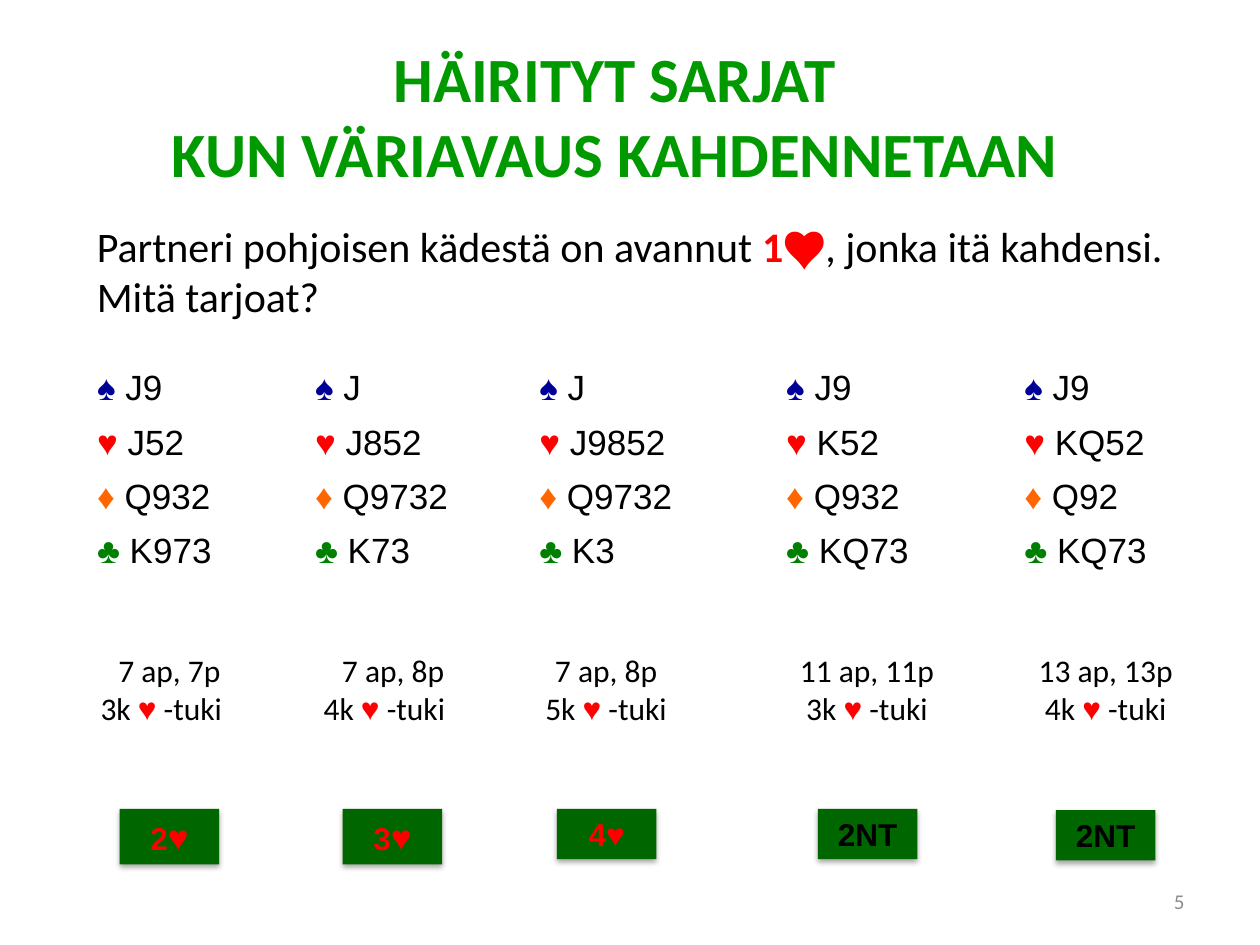
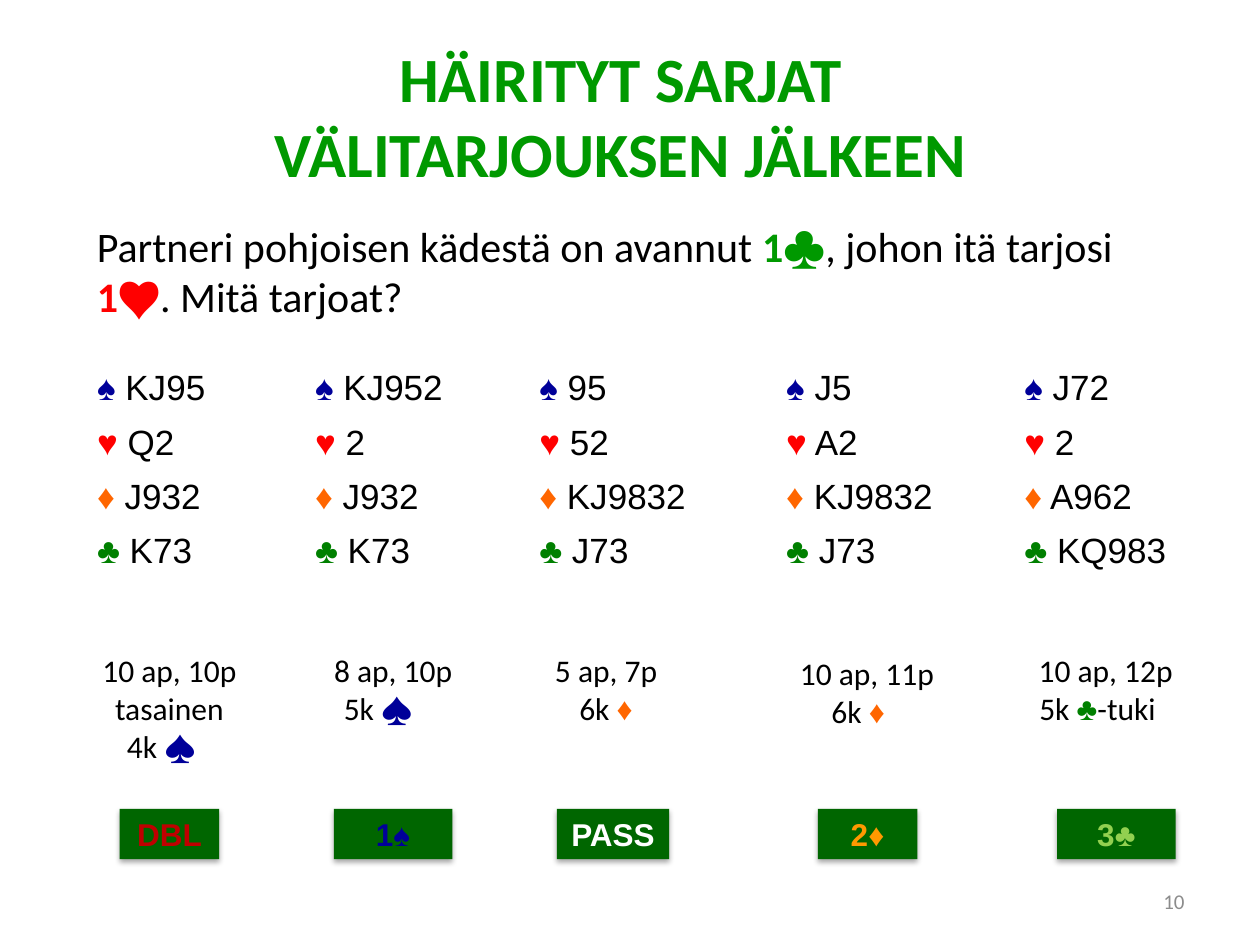
"""Build two bridge bidding quiz slides."""
import pptx
import pptx.util
import pptx.dml.color
import pptx.enum.shapes
import pptx.enum.text
import lxml.etree

Inches = pptx.util.Inches
RGBColor = pptx.dml.color.RGBColor
ALIGN = pptx.enum.text.PP_ALIGN

BLACK = RGBColor(0, 0, 0)
WHITE = RGBColor(255, 255, 255)
GRAY = RGBColor(0x8C, 0x8C, 0x8C)
GREEN = RGBColor(0, 0x99, 0)
DARK = RGBColor(0, 0x66, 0)
RED = RGBColor(255, 0, 0)
BRICK = RGBColor(0xC0, 0, 0)
AMBER = RGBColor(255, 0x99, 0)
LIME = RGBColor(0x92, 0xD0, 0x50)
NAVY = RGBColor(0, 0, 0x99)
ORANGE = RGBColor(255, 0x66, 0)
CLUB = RGBColor(0, 0x80, 0)
SUITS = {"♠": NAVY, "♥": RED, "♦": ORANGE, "♣": CLUB}
SANS, BODY = "Arial", "Calibri"

COLS = (1.73, 1.78, 1.96, 1.89, 1.57)
ROW = 0.43
NOTES = ((0.68, 1.33), (2.41, 1.42), (3.99, 1.64), (6.14, 1.48), (7.95, 1.65))

# Each note is a top and its lines: (text before, suit, suit font, text after, indent).
SLIDES = [
    {
        "title": ("HÄIRITYT SARJAT", "KUN VÄRIAVAUS KAHDENNETAAN"),
        "frame": (1.14, 7.48),
        "ask": [("Partneri pohjoisen kädestä on avannut ", BLACK, False),
                ("1", RED, True), ("♥", RED, False),
                (", jonka itä kahdensi. Mitä tarjoat?", BLACK, False)],
        "hands": ["J9 J52 Q932 K973", "J J852 Q9732 K73", "J J9852 Q9732 K3",
                  "J9 K52 Q932 KQ73", "J9 KQ52 Q92 KQ73"],
        "notes": [
            (5.12, ["7 ap, 7p", ("3k ", "♥", SANS, " -tuki", 0.02)]),
            (5.12, ["7 ap, 8p", ("4k ", "♥", SANS, " -tuki", 0.06)]),
            (5.12, ["7 ap, 8p", ("5k ", "♥", SANS, " -tuki", None)]),
            (5.12, ["11 ap, 11p", ("3k ", "♥", SANS, " -tuki", None)]),
            (5.12, ["13 ap, 13p", ("4k ", "♥", SANS, " -tuki", None)])],
        "bids": [
            (0.95, 6.42, 0.79, 0.44, RED, [("2", 18, True), ("♥", 20, False)]),
            (2.72, 6.42, 0.79, 0.44, RED, [("3", 18, True), ("♥", 20, False)]),
            (4.42, 6.42, 0.79, 0.4, RED, [("4", 18, True), ("♥", 18, False)]),
            (6.49, 6.42, 0.79, 0.4, BLACK, [("2NT", 18, True)]),
            (8.38, 6.43, 0.79, 0.4, BLACK, [("2NT", 18, True)])],
        "page": "5",
    },
    {
        "title": ("HÄIRITYT SARJAT", "VÄLITARJOUKSEN JÄLKEEN"),
        "frame": (1.62, 6.61),
        "ask": [("Partneri pohjoisen kädestä on avannut ", BLACK, False),
                ("1", GREEN, True), ("♣", GREEN, False),
                (", johon itä tarjosi ", BLACK, False),
                ("1", RED, True), ("♥", RED, False),
                (". Mitä tarjoat?", BLACK, False)],
        "hands": ["KJ95 Q2 J932 K73", "KJ952 2 J932 K73", "95 52 KJ9832 J73",
                  "J5 A2 KJ9832 J73", "J72 2 A962 KQ983"],
        "notes": [
            (5.12, ["10 ap, 10p", "tasainen", ("4k ", "♠", BODY, "", 0.23)]),
            (5.12, ["8 ap, 10p", ("5k ", "♠", BODY, "", 0.22)]),
            (5.12, ["5 ap, 7p", ("6k ", "♦", SANS, "", None)]),
            (5.14, ["10 ap, 11p", ("6k ", "♦", SANS, "", 0.36)]),
            (5.12, ["10 ap, 12p", ("5k ", "♣", SANS, "-tuki", 0.2)])],
        "bids": [
            (0.95, 6.42, 0.79, 0.4, BRICK, [("DBL", 18, True)]),
            (2.65, 6.42, 0.94, 0.4, NAVY, [("1♠", 18, True)]),
            (4.42, 6.42, 0.89, 0.4, WHITE, [("PASS", 18, True)]),
            (6.49, 6.42, 0.79, 0.4, AMBER, [("2♦", 18, True)]),
            (8.39, 6.42, 0.94, 0.4, LIME, [("3", 18, True), ("♣", 18, False)])],
        "page": "10",
    },
]


def put(para, text, size, font=BODY, color=BLACK, bold=False):
    """Add one styled run."""
    run = para.add_run()
    run.text = text
    run.font.size = pptx.util.Pt(size)
    run.font.name = font
    run.font.bold = bold
    run.font.color.rgb = color


def box(slide, left, top, width, height):
    """Add a wrapping text box and return its frame."""
    area = slide.shapes.add_textbox(*map(Inches, (left, top, width, height)))
    area.text_frame.word_wrap = True
    return area.text_frame


def head(slide, lines, frame):
    """Place and fill the title."""
    title = slide.shapes.title
    left, width = frame
    title.left, title.top = Inches(left), Inches(0.26)
    title.width, title.height = Inches(width), Inches(1.31)
    text = title.text_frame
    text.word_wrap = True
    text.auto_size = pptx.enum.text.MSO_AUTO_SIZE.NONE
    text.vertical_anchor = pptx.enum.text.MSO_ANCHOR.TOP
    para = text.paragraphs[0]
    para.alignment = ALIGN.CENTER
    for num, line in enumerate(lines):
        if num:
            para.add_line_break()
        put(para, line, 36, color=GREEN, bold=True)


def deal(slide, hands):
    """Show the hands as a table, one per column."""
    frame = slide.shapes.add_table(
        len(SUITS), len(hands), Inches(0.67), Inches(2.88),
        Inches(sum(COLS)), Inches(ROW * len(SUITS)))
    table = frame.table
    table.first_row = table.horz_banding = False
    for row in table.rows:
        row.height = Inches(ROW)
    for col, (width, hand) in enumerate(zip(COLS, hands)):
        table.columns[col].width = Inches(width)
        for row, (suit, cards) in enumerate(zip(SUITS, hand.split())):
            cell = table.cell(row, col)
            cell.fill.background()
            para = cell.text_frame.paragraphs[0]
            para.alignment = ALIGN.JUSTIFY
            put(para, suit, 20, SANS, SUITS[suit])
            put(para, " " + cards, 20, SANS)


def note(slide, place, top, lines):
    """Write the points and the support below one hand."""
    left, width = place
    text = box(slide, left, top, width, 0.11 + 0.3 * len(lines))
    for num, line in enumerate(lines):
        para = text.add_paragraph() if num else text.paragraphs[0]
        para.alignment = ALIGN.CENTER
        if isinstance(line, str):
            put(para, line, 18)
            continue
        start, suit, font, end, indent = line
        put(para, start, 18)
        put(para, suit, 18, font, SUITS[suit])
        if end:
            put(para, end, 18)
        if indent is not None:
            para.alignment = ALIGN.LEFT
            para._p.get_or_add_pPr().set("marL", str(Inches(indent)))


def shade(shape):
    """Give a shape a soft shadow straight below."""
    shape.shadow.inherit = False
    space = "{http://schemas.openxmlformats.org/drawingml/2006/main}"
    effect = shape._element.spPr.find(space + "effectLst")
    cast = lxml.etree.SubElement(effect, space + "outerShdw", blurRad="40000",
                                 dist="23000", dir="5400000", rotWithShape="0")
    color = lxml.etree.SubElement(cast, space + "srgbClr", val="000000")
    lxml.etree.SubElement(color, space + "alpha", val="35000")


def bid(slide, left, top, width, height, color, runs):
    """Draw one answer card."""
    card = slide.shapes.add_shape(
        pptx.enum.shapes.MSO_SHAPE.RECTANGLE,
        *map(Inches, (left, top, width, height)))
    card.fill.solid()
    card.fill.fore_color.rgb = DARK
    card.line.fill.background()
    shade(card)
    card.text_frame.word_wrap = True
    para = card.text_frame.paragraphs[0]
    para.alignment = ALIGN.CENTER
    for text, size, bold in runs:
        put(para, text, size, SANS, color, bold)


def main():
    """Build and save the slides."""
    deck = pptx.Presentation()
    deck.slide_width, deck.slide_height = Inches(10), Inches(7.5)
    for data in SLIDES:
        slide = deck.slides.add_slide(deck.slide_layouts[5])
        head(slide, data["title"], data["frame"])
        deal(slide, data["hands"])
        for place, (top, lines) in zip(NOTES, data["notes"]):
            note(slide, place, top, lines)
        ask = box(slide, 0.67, 1.7, 8.7, 0.91).paragraphs[0]
        for text, color, bold in data["ask"]:
            put(ask, text, 24, color=color, bold=bold)
        for card in data["bids"]:
            bid(slide, *card)
        foot = box(slide, 7.17, 6.95, 2.33, 0.4)
        foot.vertical_anchor = pptx.enum.text.MSO_ANCHOR.MIDDLE
        foot.paragraphs[0].alignment = ALIGN.RIGHT
        put(foot.paragraphs[0], data["page"], 12, color=GRAY)
    deck.save("out.pptx")


if __name__ == "__main__":
    main()
